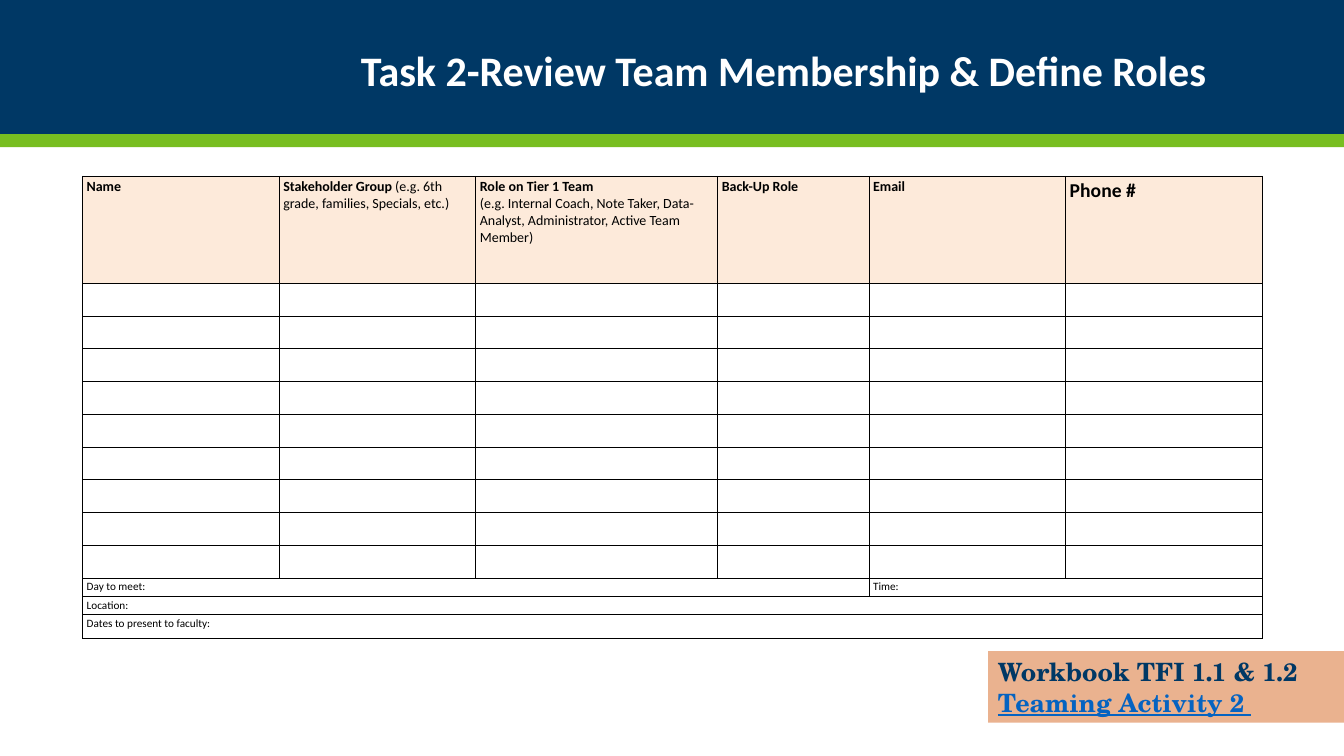
from lxml import etree
from pptx import Presentation
from pptx.dml.color import RGBColor
from pptx.enum.shapes import MSO_SHAPE
from pptx.enum.text import MSO_ANCHOR, MSO_AUTO_SIZE, PP_ALIGN
from pptx.oxml.ns import qn
from pptx.util import Inches, Pt

RECTANGLE = MSO_SHAPE.RECTANGLE
MIDDLE = MSO_ANCHOR.MIDDLE
LEFT = PP_ALIGN.LEFT
NAVY = "003865"


def style_font(font, size, color, bold=False, name="Calibri"):
    font.name = name
    font.size = Pt(size)
    font.bold = bold
    font.color.rgb = RGBColor.from_string(color)


def add_rectangle(left, top, width, height, color):
    shape = slide.shapes.add_shape(
        RECTANGLE, Inches(left), Inches(top), Inches(width), Inches(height))
    shape.shadow.inherit = False
    shape.fill.solid()
    shape.fill.fore_color.rgb = RGBColor.from_string(color)
    shape.line.fill.background()
    return shape


presentation = Presentation()
presentation.slide_width = Inches(13.33)
presentation.slide_height = Inches(7.5)
slide = presentation.slides.add_slide(presentation.slide_layouts[5])

# Header bands, placed behind the title
title = slide.shapes.title
for top, height, color in [(0, 1.33, NAVY), (1.33, 0.13, "78BE21")]:
    band = add_rectangle(0, top, 13.33, height, color)
    title._element.addprevious(band._element)

# Title
title.left, title.top = Inches(3.48), Inches(0.38)
title.width, title.height = Inches(9.67), Inches(0.68)
title.text_frame.text = "Task 2-Review Team Membership & Define Roles"
title.text_frame.auto_size = MSO_AUTO_SIZE.NONE
title.text_frame.vertical_anchor = MIDDLE
paragraph = title.text_frame.paragraphs[0]
paragraph.alignment = LEFT
paragraph.line_spacing = 0.9
style_font(paragraph.font, 30, "FFFFFF", True)

# Team table
column_widths = [1.95, 1.95, 2.4, 1.5, 1.95, 1.95]
row_heights = [1.06] + [0.31] * 9 + [0.18, 0.18, 0.24]
table = slide.shapes.add_table(
    len(row_heights), len(column_widths), Inches(0.82), Inches(1.75),
    Inches(sum(column_widths)), Inches(sum(row_heights))).table
table.first_row = False
table.horz_banding = False
for column, width in zip(table.columns, column_widths):
    column.width = Inches(width)
for row, height in zip(table.rows, row_heights):
    row.height = Inches(height)

# Cell margins, borders and fills
for row_index, row in enumerate(table.rows):
    is_blank_row = 1 <= row_index <= 9
    for cell in row.cells:
        cell.margin_left = cell.margin_right = Inches(0.04)
        cell.margin_top = cell.margin_bottom = Inches(0.01 if is_blank_row else 0.02)
        cell_properties = cell._tc.get_or_add_tcPr()
        for side in ("a:lnL", "a:lnR", "a:lnT", "a:lnB"):
            border = etree.SubElement(cell_properties, qn(side), w=str(Pt(0.75)))
            border_fill = etree.SubElement(border, qn("a:solidFill"))
            etree.SubElement(border_fill, qn("a:srgbClr"), val="000000")
        if row_index == 0:
            cell.fill.solid()
            cell.fill.fore_color.rgb = RGBColor.from_string("FDEADA")
        else:
            cell.fill.background()

# Column headings: paragraphs of (text, bold) runs
headings = [
    [[("Name", True)]],
    [[("Stakeholder Group ", True),
      ("(e.g. 6th grade, families, Specials, etc.)", False)]],
    [[("Role on Tier 1 Team", True)],
     [("(e.g. Internal Coach, Note Taker, Data-Analyst, Administrator, "
       "Active Team Member)", False)]],
    [[("Back-Up Role", True)]],
    [[("Email", True)]],
    [[("Phone #", True)]],
]
for column_index, heading in enumerate(headings):
    text_frame = table.cell(0, column_index).text_frame
    size = 14 if column_index == 5 else 10
    for paragraph_index, runs in enumerate(heading):
        paragraph = text_frame.add_paragraph() if paragraph_index else text_frame.paragraphs[0]
        for text, bold in runs:
            run = paragraph.add_run()
            run.text = text
            style_font(run.font, size, "000000", bold)

# Meeting details in merged cells: row, first column, last column, text
for row_index, first, last, text in [
    (10, 0, 3, "Day to meet:"),
    (10, 4, 5, "Time:"),
    (11, 0, 5, "Location:"),
    (12, 0, 5, "Dates to present to faculty:"),
]:
    cell = table.cell(row_index, first)
    cell.merge(table.cell(row_index, last))
    cell.text = text
    style_font(cell.text_frame.paragraphs[0].font, 8, "000000")

# Workbook reference
workbook = add_rectangle(9.8, 6.46, 3.53, 0.71, "EAB28F")
workbook.text_frame.word_wrap = True
workbook.text_frame.vertical_anchor = MIDDLE
workbook.text_frame.text = "Workbook TFI 1.1 & 1.2\nTeaming Activity 2 "
for paragraph, color in zip(workbook.text_frame.paragraphs, [NAVY, "0563C1"]):
    paragraph.alignment = LEFT
    style_font(paragraph.font, 18, color, True, "TeX Gyre Schola")
workbook.text_frame.paragraphs[1].font.underline = True

presentation.save("out.pptx")
